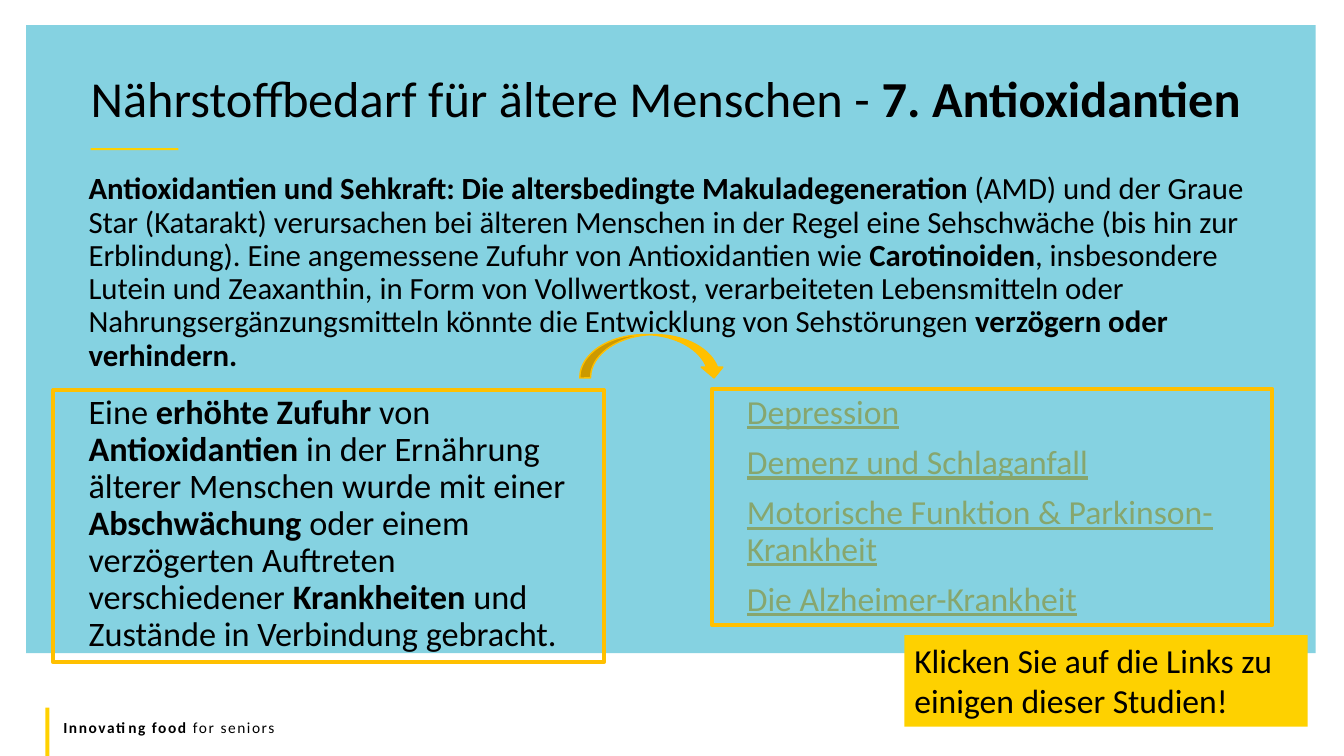
from dataclasses import dataclass
from typing import Optional

import pptx
import pptx.dml.color
import pptx.enum.shapes
import pptx.enum.text
import pptx.util

Inches = pptx.util.Inches
Pt = pptx.util.Pt
Shapes = pptx.enum.shapes.MSO_SHAPE
Anchor = pptx.enum.text.MSO_ANCHOR

FONT = "Calibri"
BLACK, TURQUOISE, YELLOW = "000000", "85D2E1", "FFD100"
AMBER, NOTE_YELLOW, LINK_GREEN = "FFC000", "FED100", "87A66E"


@dataclass(frozen=True)
class Block:
    """A preset shape, with optional fill and outline."""
    left: float
    top: float
    width: float
    height: float
    fill: Optional[str] = None
    line: Optional[str] = None
    line_width: float = 1
    kind: Shapes = Shapes.RECTANGLE


@dataclass(frozen=True)
class Copy:
    """Paragraphs of text; parts between ** marks are bold."""
    paragraphs: tuple[str, ...]
    size: float
    color: str = BLACK
    indent: float = 0
    line_spacing: float = 1
    space_before: float = 0
    tracking: float = 0
    underline: bool = False
    anchor: Anchor = Anchor.TOP
    margin_right: float = 0.1


def rgb(value: str) -> pptx.dml.color.RGBColor:
    return pptx.dml.color.RGBColor.from_string(value)


def draw_block(slide, block: Block):
    shape = slide.shapes.add_shape(
        block.kind, Inches(block.left), Inches(block.top),
        Inches(block.width), Inches(block.height))
    shape.shadow.inherit = False
    if block.fill:
        shape.fill.solid()
        shape.fill.fore_color.rgb = rgb(block.fill)
    else:
        shape.fill.background()
    if block.line:
        shape.line.color.rgb = rgb(block.line)
        shape.line.width = Pt(block.line_width)
    else:
        shape.line.fill.background()
    return shape


def add_text_box(slide, left: float, top: float, width: float, height: float):
    return slide.shapes.add_textbox(
        Inches(left), Inches(top), Inches(width), Inches(height))


def write_text(shape, copy: Copy) -> None:
    frame = shape.text_frame
    frame.word_wrap = True
    frame.vertical_anchor = copy.anchor
    frame.margin_right = Inches(copy.margin_right)
    for index, text in enumerate(copy.paragraphs):
        paragraph = frame.add_paragraph() if index else frame.paragraphs[0]
        paragraph.alignment = pptx.enum.text.PP_ALIGN.LEFT
        paragraph.line_spacing = copy.line_spacing
        paragraph.space_before = Pt(copy.space_before if index else 0)
        properties = paragraph._p.get_or_add_pPr()
        properties.set("marL", str(Inches(copy.indent)))
        properties.set("indent", "0")
        paragraph.font.name = FONT
        paragraph.font.size = Pt(copy.size)
        paragraph.font.color.rgb = rgb(copy.color)
        paragraph.font.underline = copy.underline
        for position, part in enumerate(text.split("**")):
            if not part:
                continue
            run = paragraph.add_run()
            run.text = part
            run.font.bold = position % 2 == 1
            if copy.tracking:
                run._r.get_or_add_rPr().set("spc", str(round(copy.tracking * 100)))


BACKGROUND = (
    Block(0.26, 0.25, 12.79, 6.23, fill=TURQUOISE),
    Block(0.9, 1.47, 0.87, 0.02, fill=YELLOW),  # title rule
    Block(0.45, 7.02, 0.04, 0.48, fill=YELLOW),  # footer bar
)
LINKS_BOX = Block(7.06, 3.86, 5.56, 2.34, line=AMBER, line_width=3)
INTAKE_BOX = Block(0.53, 3.87, 5.46, 2.7, line=AMBER, line_width=3)
ARROW = Block(5.75, 3.32, 1.44, 0.43, fill=AMBER, line=AMBER,
              kind=Shapes.CURVED_DOWN_ARROW)
NOTE_BOX = Block(8.97, 6.3, 4, 0.91, fill=NOTE_YELLOW)

FOOTER = Copy(("**Innovating food **for seniors",), 11, tracking=1.1)
TITLE = Copy(("Nährstoffbedarf für ältere Menschen - **7. Antioxidantien**",),
             36, line_spacing=0.8, anchor=Anchor.MIDDLE)
BODY = Copy((
    "**Antioxidantien und Sehkraft: Die altersbedingte Makuladegeneration **"
    "(AMD) und der Graue Star (Katarakt) verursachen bei älteren Menschen in "
    "der Regel eine Sehschwäche (bis hin zur Erblindung). Eine angemessene "
    "Zufuhr von Antioxidantien wie **Carotinoiden**, insbesondere Lutein und "
    "Zeaxanthin, in Form von Vollwertkost, verarbeiteten Lebensmitteln oder "
    "Nahrungsergänzungsmitteln könnte die Entwicklung von Sehstörungen "
    "**verzögern oder verhindern.**",
), 22, indent=0.25, line_spacing=0.9, margin_right=0.4)
LINKS = Copy((
    "Depression",
    "Demenz und Schlaganfall",
    "Motorische Funktion & Parkinson-Krankheit",
    "Die Alzheimer-Krankheit",
), 24, LINK_GREEN, indent=0.25, line_spacing=0.9, space_before=10,
    underline=True, anchor=Anchor.MIDDLE)
INTAKE = Copy((
    "Eine **erhöhte Zufuhr** von **Antioxidantien** in der Ernährung älterer "
    "Menschen wurde mit einer **Abschwächung** oder einem verzögerten "
    "Auftreten verschiedener **Krankheiten** und Zustände in Verbindung "
    "gebracht.",
), 24.5, indent=0.25, line_spacing=0.9)
NOTE = Copy(("Klicken Sie auf die Links zu einigen dieser Studien!",), 24)


def main() -> None:
    presentation = pptx.Presentation()
    presentation.slide_width = Inches(13.33)
    presentation.slide_height = Inches(7.5)
    slide = presentation.slides.add_slide(presentation.slide_layouts[6])

    # Background and footer
    for block in BACKGROUND:
        draw_block(slide, block)
    write_text(add_text_box(slide, 0.53, 7.07, 12, 0.29), FOOTER)

    # Body and title
    write_text(add_text_box(slide, 0.53, 1.67, 12.44, 4.72), BODY)
    write_text(add_text_box(slide, 0.8, 0.7, 11.82, 0.64), TITLE)

    # Framed boxes, arrow and note
    write_text(draw_block(slide, LINKS_BOX), LINKS)
    write_text(draw_block(slide, INTAKE_BOX), INTAKE)
    draw_block(slide, ARROW)
    write_text(draw_block(slide, NOTE_BOX), NOTE)

    presentation.save("out.pptx")


if __name__ == "__main__":
    main()
